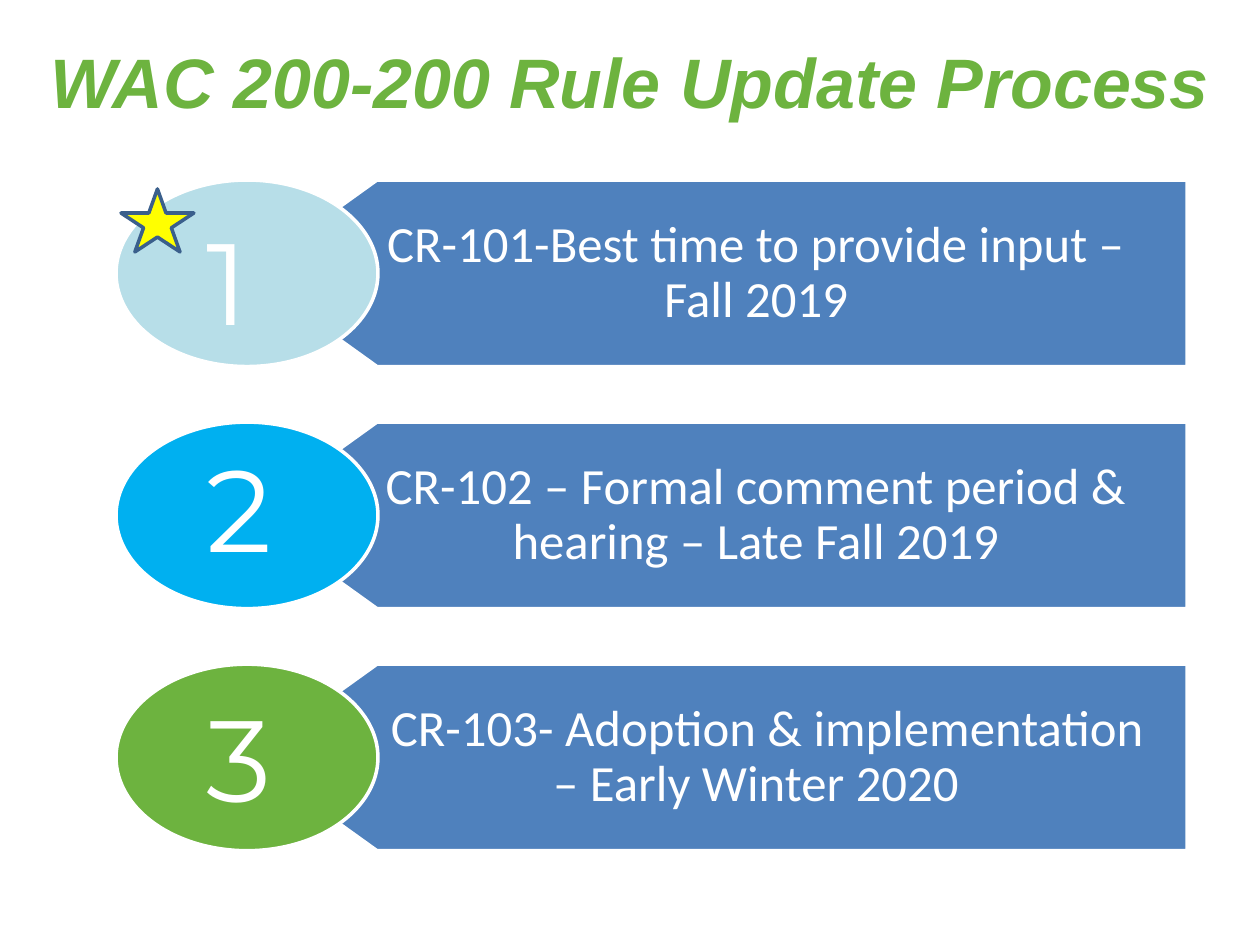
from pptx import Presentation
from pptx.dml.color import RGBColor
from pptx.enum.shapes import MSO_SHAPE
from pptx.enum.text import MSO_ANCHOR, PP_ALIGN
from pptx.util import Cm, Pt

OVAL, STAR = MSO_SHAPE.OVAL, MSO_SHAPE.STAR_5_POINT
MIDDLE, TOP = MSO_ANCHOR.MIDDLE, MSO_ANCHOR.TOP
CENTER, LEFT = PP_ALIGN.CENTER, PP_ALIGN.LEFT

COLORS = {
    "white": "FFFFFF", "green": "6DB33F", "bar": "4F81BD", "pale": "B7DEE8",
    "sky": "00B0F0", "yellow": "FFFF00", "edge": "3A5F8C",
}

ROW_TOP, ROW_STEP, ROW_HIGH = 3.63, 4.88, 3.76
# Label, oval colour, top of the number, first-line indent
STEPS = [
    ("CR-101-Best time to provide input – Fall 2019", "pale", 4.11, 0),
    ("CR-102 – Formal comment period & hearing – Late Fall 2019", "sky", 8.69, 0),
    ("CR-103- Adoption & implementation – Early Winter 2020", "green", 13.72, 0.46),
]


def color(name):
    return RGBColor.from_string(COLORS[name])


class Deck:
    def __init__(self, slide):
        self.shapes = slide.shapes

    def paint(self, shape, fill, line):
        shape.shadow.inherit = False
        shape.fill.solid()
        shape.fill.fore_color.rgb = color(fill)
        shape.line.color.rgb = color(line)
        shape.line.width = Pt(2)

    def put_text(self, shape, text, font, size, hue="white", align=CENTER,
                 anchor=MIDDLE, pads=(0.25, 0.13, 0.25, 0.13)):
        """Fill the shape with one paragraph; pads run left, top, right, bottom."""
        frame = shape.text_frame
        frame.word_wrap = True
        frame.vertical_anchor = anchor
        (frame.margin_left, frame.margin_top,
         frame.margin_right, frame.margin_bottom) = map(Cm, pads)
        para = frame.paragraphs[0]
        para.text = text
        para.alignment = align
        para.font.name = font
        para.font.size = Pt(size)
        para.font.color.rgb = color(hue)
        return para

    def label(self, box, text, font, size, **style):
        shape = self.shapes.add_textbox(*map(Cm, box))
        return self.put_text(shape, text, font, size, **style)

    def shape(self, kind, box, fill, line="white"):
        self.paint(self.shapes.add_shape(kind, *map(Cm, box)), fill, line)

    def bar(self, top, text, indent):
        """Draw a bar whose left end is a point, with its label."""
        tip, neck, right = 4.98, 7.6, 23.93
        low = top + ROW_HIGH
        points = [(neck, low), (tip, top + ROW_HIGH / 2), (neck, top), (right, top)]
        pen = self.shapes.build_freeform(Cm(right), Cm(low))
        pen.add_line_segments([(Cm(x), Cm(y)) for x, y in points], close=True)
        shape = pen.convert_to_shape()
        self.paint(shape, "bar", "white")
        para = self.put_text(shape, text, "Calibri", 29, pads=(2.16, 0.3, 0.58, 0.3))
        para.line_spacing = 0.9
        if indent:
            para._p.get_or_add_pPr().set("indent", str(Cm(indent)))


def main():
    prs = Presentation()
    prs.slide_width, prs.slide_height = Cm(25.4), Cm(19.05)
    deck = Deck(prs.slides.add_slide(prs.slide_layouts[6]))

    title = deck.label((0, 0.58, 25.4, 2.54), "WAC 200-200 Rule Update Process",
                       "Arial", 40, hue="green", pads=(0.25, 0.13, 0.25, 0.57))
    title.font.bold = title.font.italic = True

    for row, (text, fill, _, indent) in enumerate(STEPS):
        top = ROW_TOP + row * ROW_STEP
        deck.bar(top, text, indent)
        deck.shape(OVAL, (2.34, top, 5.28, ROW_HIGH), fill)
    for num, (_, _, top, _) in enumerate(STEPS, 1):
        deck.label((3.91, top, 2.64, 3.07), str(num), "Montserrat", 66,
                   align=LEFT, anchor=TOP)
    deck.shape(STAR, (2.44, 3.81, 1.47, 1.27), "yellow", "edge")

    prs.save("out.pptx")


if __name__ == "__main__":
    main()
